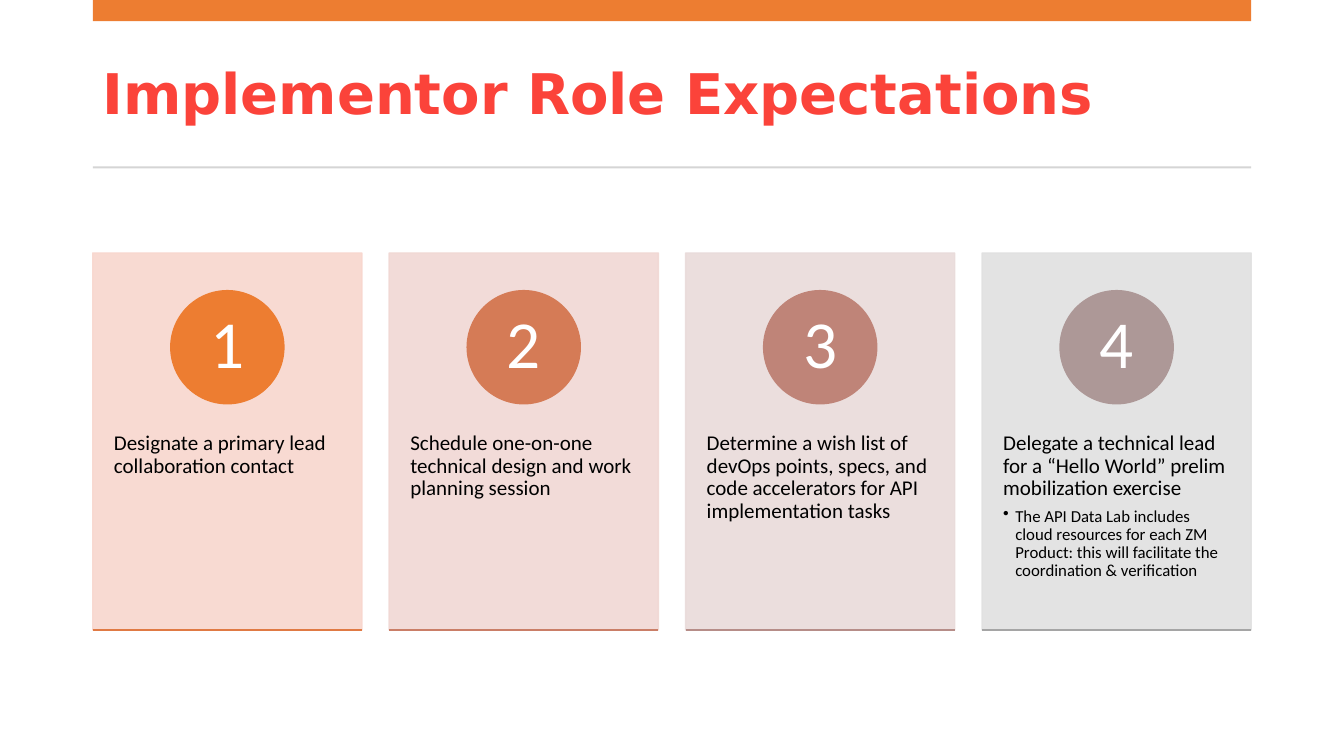
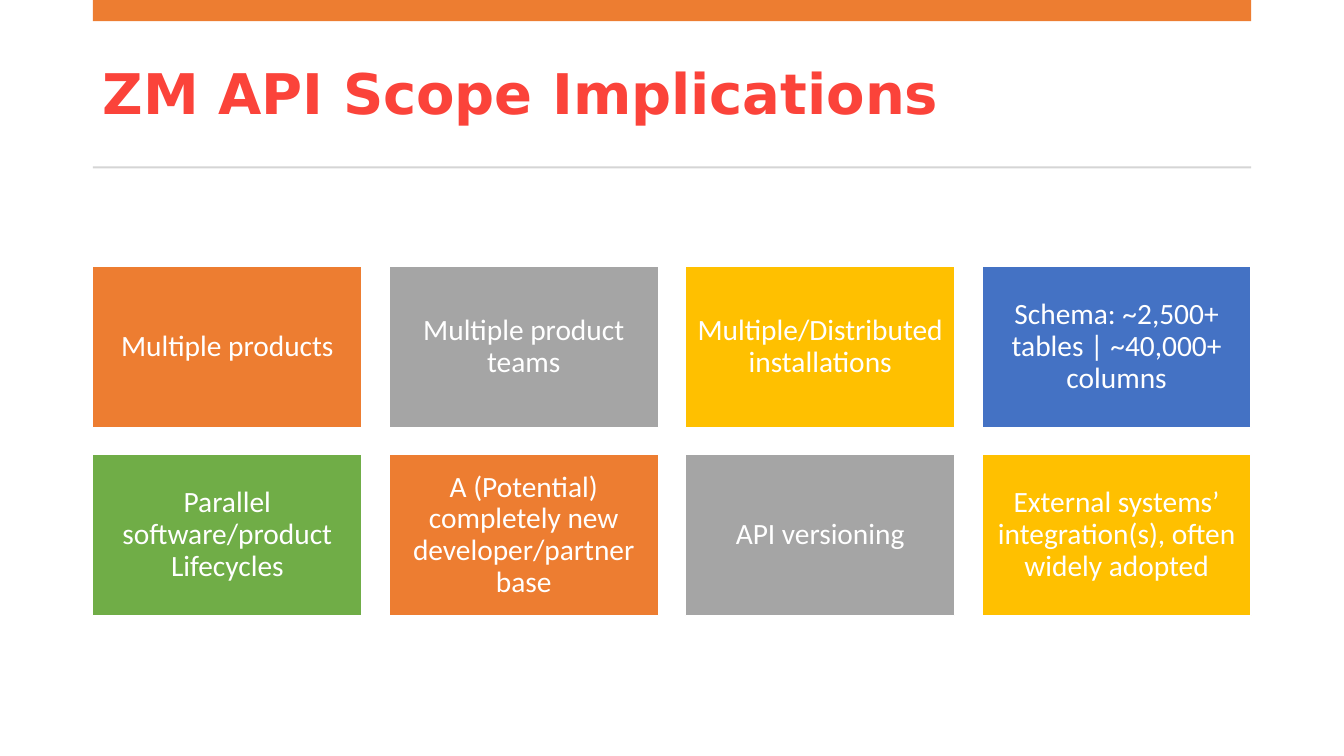
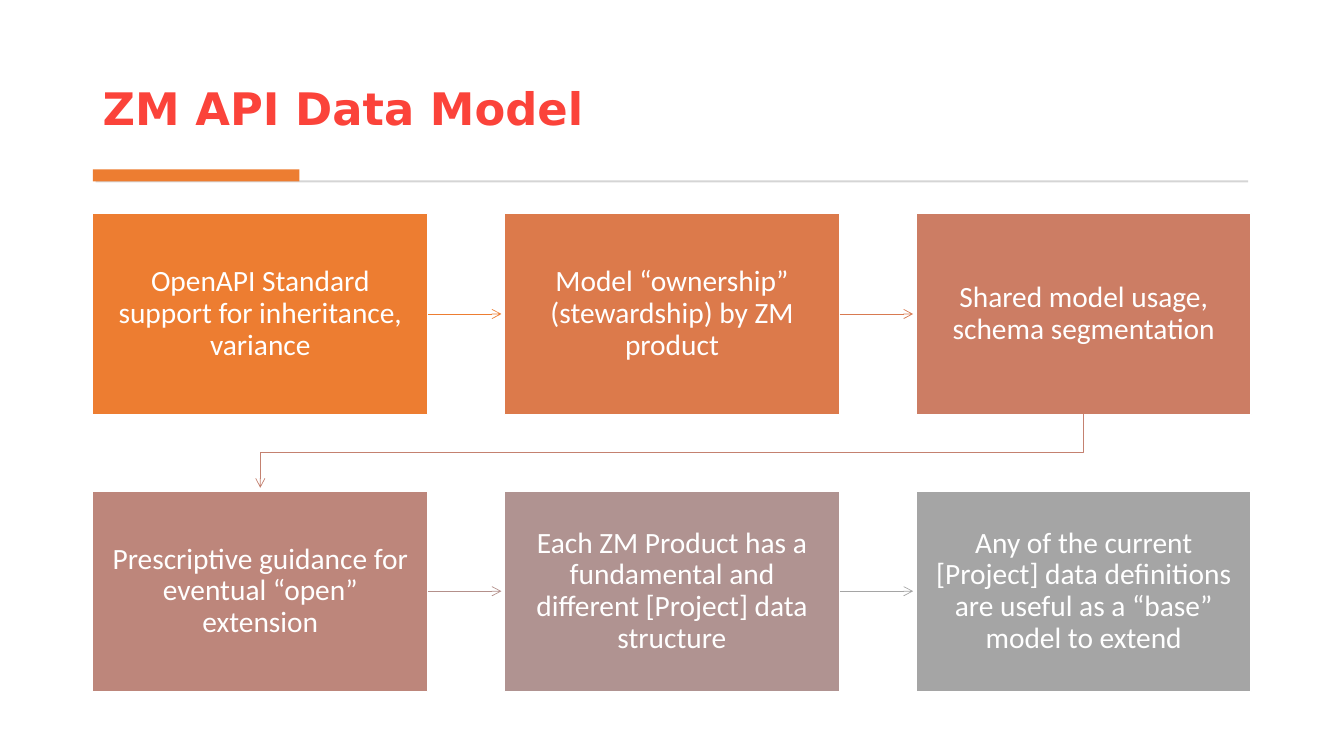
from lxml import etree
from pptx import Presentation
from pptx.dml.color import RGBColor
from pptx.enum.shapes import MSO_CONNECTOR, MSO_SHAPE
from pptx.enum.text import MSO_ANCHOR, PP_ALIGN
from pptx.oxml.ns import qn
from pptx.util import Inches, Pt

RECTANGLE, OVAL = MSO_SHAPE.RECTANGLE, MSO_SHAPE.OVAL
STRAIGHT = MSO_CONNECTOR.STRAIGHT
TOP, MIDDLE, BOTTOM = MSO_ANCHOR.TOP, MSO_ANCHOR.MIDDLE, MSO_ANCHOR.BOTTOM
LEFT, CENTER = PP_ALIGN.LEFT, PP_ALIGN.CENTER

# Shared style
BODY_FONT, TITLE_FONT = "Calibri", "DejaVu Sans"
RED, ORANGE, GRAY, GOLD = "FB433A", "ED7D31", "A5A5A5", "FFC000"
BLUE, GREEN, RULE, WHITE, BLACK = "4472C4", "70AD47", "D5D5D5", "FFFFFF", "000000"

# Shared grid, in inches
MARGIN, CONTENT_WIDTH = 0.92, 11.49

# Slide content: panel colour, circle colour, base line colour, text, bullet
EXPECTATIONS = [
    ("F8D7CE", ORANGE, "E07A44", "Designate a primary lead collaboration contact", None),
    ("F1D8D4", "D57B56", "CA7E67",
     "Schedule one-on-one technical design and work planning session", None),
    ("E9DBDA", "BF8478", "B68D88",
     "Determine a wish list of devOps points, specs, and code accelerators "
     "for API implementation tasks", None),
    ("E1E1E1", "AD9897", GRAY,
     "Delegate a technical lead for a “Hello World” prelim mobilization exercise",
     "The API Data Lab includes cloud resources for each ZM Product: "
     "this will facilitate the coordination & verification"),
]
IMPLICATIONS = [
    (ORANGE, "Multiple products"),
    (GRAY, "Multiple product teams"),
    (GOLD, "Multiple/Distributed installations"),
    (BLUE, "Schema: ~2,500+ tables | ~40,000+ columns"),
    (GREEN, "Parallel software/product Lifecycles"),
    (ORANGE, "A (Potential) completely new developer/partner base"),
    (GRAY, "API versioning"),
    (GOLD, "External systems’ integration(s), often widely adopted"),
]
MODEL_STEPS = [
    (ORANGE, "OpenAPI Standard support for inheritance, variance"),
    ("DC7A4B", "Model “ownership” (stewardship) by ZM product"),
    ("CC7D64", "Shared model usage, schema segmentation"),
    ("BD867B", "Prescriptive guidance for eventual “open” extension"),
    ("B09391", "Each ZM Product has a fundamental and different [Project] data structure"),
    (GRAY, "Any of the current [Project] data definitions are useful as a “base” model to extend"),
]
MODEL_ARROWS = [ORANGE, "D87A51", "C48170", "B4908B", GRAY]


def color(value):
    return RGBColor.from_string(value)


def grid(columns, gap, top, height, row_gap, count):
    """Left, top, width and height of each cell, row by row."""
    width = (CONTENT_WIDTH - gap * (columns - 1)) / columns
    return [(MARGIN + index % columns * (width + gap),
             top + index // columns * (height + row_gap), width, height)
            for index in range(count)]


def add_box(slide, box, fill, line=None, preset=RECTANGLE):
    shape = slide.shapes.add_shape(preset, *map(Inches, box))
    shape.shadow.inherit = False
    shape.fill.solid()
    shape.fill.fore_color.rgb = color(fill)
    if line:
        shape.line.color.rgb = color(line)
        shape.line.width = Pt(1)
    else:
        shape.line.fill.background()
    return shape


def set_opacity(shape, percent):
    for element in list(shape.element.spPr.iter(qn("a:srgbClr"))):
        etree.SubElement(element, qn("a:alpha")).set("val", str(percent * 1000))


def set_frame(shape, anchor, horizontal, vertical):
    frame = shape.text_frame
    frame.word_wrap = True
    frame.vertical_anchor = anchor
    frame.margin_left = frame.margin_right = Inches(horizontal)
    frame.margin_top = frame.margin_bottom = Inches(vertical)
    return frame


def write(paragraph, text, size, fill, align=CENTER, font=BODY_FONT, bold=False):
    paragraph.text = text
    paragraph.alignment = align
    paragraph.line_spacing = 0.9
    paragraph.font.name = font
    paragraph.font.size = Pt(size)
    paragraph.font.bold = bold
    paragraph.font.color.rgb = color(fill)


def add_bullet(paragraph, indent):
    properties = paragraph._p.get_or_add_pPr()
    properties.set("marL", str(Inches(indent)))
    properties.set("indent", str(-Inches(indent)))
    etree.SubElement(properties, qn("a:buChar")).set("char", "•")


def add_line(slide, start, end, stroke, width):
    line = slide.shapes.add_connector(STRAIGHT, *map(Inches, (*start, *end)))
    line.line.color.rgb = color(stroke)
    line.line.width = Pt(width)
    etree.SubElement(line.element.spPr, qn("a:effectLst"))
    return line


def add_arrowhead(shape):
    etree.SubElement(shape.line._get_or_add_ln(), qn("a:tailEnd")).set("type", "arrow")


def add_bent_arrow(slide, points, stroke):
    corners = [(Inches(x), Inches(y)) for x, y in points]
    builder = slide.shapes.build_freeform(*corners[0])
    builder.add_line_segments(corners[1:], close=False)
    shape = builder.convert_to_shape()
    shape.shadow.inherit = False
    shape.fill.background()
    shape.line.color.rgb = color(stroke)
    shape.line.width = Pt(0.5)
    add_arrowhead(shape)


def add_tile(slide, box, fill, text, inset):
    tile = add_box(slide, box, fill, WHITE)
    frame = set_frame(tile, MIDDLE, inset, inset)
    write(frame.paragraphs[0], text, 21, WHITE)


def add_title(slide, text, top, height, size, anchor):
    box = (MARGIN, top, CONTENT_WIDTH, height)
    title = slide.shapes.add_textbox(*map(Inches, box))
    frame = set_frame(title, anchor, 0.1, 0.05)
    write(frame.paragraphs[0], text, size, RED, LEFT, TITLE_FONT, True)


def add_slide(presentation):
    return presentation.slides.add_slide(presentation.slide_layouts[6])


def add_banded_slide(presentation, title):
    slide = add_slide(presentation)
    add_title(slide, title, 0.37, 1.18, 40, MIDDLE)
    add_box(slide, (MARGIN, 0, CONTENT_WIDTH, 0.21), ORANGE)
    add_box(slide, (MARGIN, 1.65, CONTENT_WIDTH, 0.02), RULE)
    return slide


def add_card(slide, box, number, panel_fill, circle_fill, base_color, text, bullet):
    left, top, width, height = box
    panel = add_box(slide, box, panel_fill, panel_fill)
    set_opacity(panel, 90)
    frame = set_frame(panel, TOP, 0.21, 0.36)
    frame.margin_top = Inches(1.78)
    write(frame.paragraphs[0], text, 15, BLACK, LEFT)
    if bullet:
        frame.paragraphs[0].space_after = Pt(5.25)
        paragraph = frame.add_paragraph()
        add_bullet(paragraph, 0.12)
        write(paragraph, bullet, 12, BLACK, LEFT)

    diameter = 0.3 * height
    circle_box = (left + (width - diameter) / 2, top + 0.1 * height, diameter, diameter)
    circle = add_box(slide, circle_box, circle_fill, circle_fill, OVAL)
    frame = set_frame(circle, MIDDLE, 0.09, 0.01)
    write(frame.paragraphs[0], str(number), 48, WHITE)
    add_line(slide, (left, top + height), (left + width, top + height), base_color, 1)


def build_expectations(presentation):
    slide = add_banded_slide(presentation, "Implementor Role Expectations")
    cells = grid(4, 0.27, 2.51, 3.74, 0, len(EXPECTATIONS))
    for number, (cell, content) in enumerate(zip(cells, EXPECTATIONS), 1):
        add_card(slide, cell, number, *content)


def build_implications(presentation):
    slide = add_banded_slide(presentation, "ZM API Scope Implications")
    cells = grid(4, 0.27, 2.64, 1.6, 0.27, len(IMPLICATIONS))
    for cell, (fill, text) in zip(cells, IMPLICATIONS):
        add_tile(slide, cell, fill, text, 0.09)


def build_data_model(presentation):
    slide = add_slide(presentation)
    add_title(slide, "ZM API Data Model", 0.28, 1.11, 32, BOTTOM)
    add_box(slide, (0.95, 1.79, 11.43, 0.02), RULE)
    add_box(slide, (MARGIN, 1.68, 2.05, 0.12), ORANGE)

    cells = grid(3, 0.76, 2.12, 1.99, 0.76, len(MODEL_STEPS))
    for cell, (fill, text) in zip(cells, MODEL_STEPS):
        add_tile(slide, cell, fill, text, 0.16)

    # Arrows from each step to the next
    clearance = 0.03
    for source, target, stroke in zip(cells, cells[1:], MODEL_ARROWS):
        left, top, width, height = source
        if target[1] == top:
            middle = top + height / 2
            arrow = add_line(slide, (left + width, middle),
                             (target[0] - clearance, middle), stroke, 0.5)
            add_arrowhead(arrow)
        else:
            start_x, end_x = left + width / 2, target[0] + width / 2
            bottom = top + height
            turn = (bottom + target[1]) / 2
            add_bent_arrow(slide, [(start_x, bottom), (start_x, turn), (end_x, turn),
                                   (end_x, target[1] - clearance)], stroke)


def main():
    presentation = Presentation()
    presentation.slide_width = Inches(13.33)
    presentation.slide_height = Inches(7.5)
    build_expectations(presentation)
    build_implications(presentation)
    build_data_model(presentation)
    presentation.save("out.pptx")


if __name__ == "__main__":
    main()
